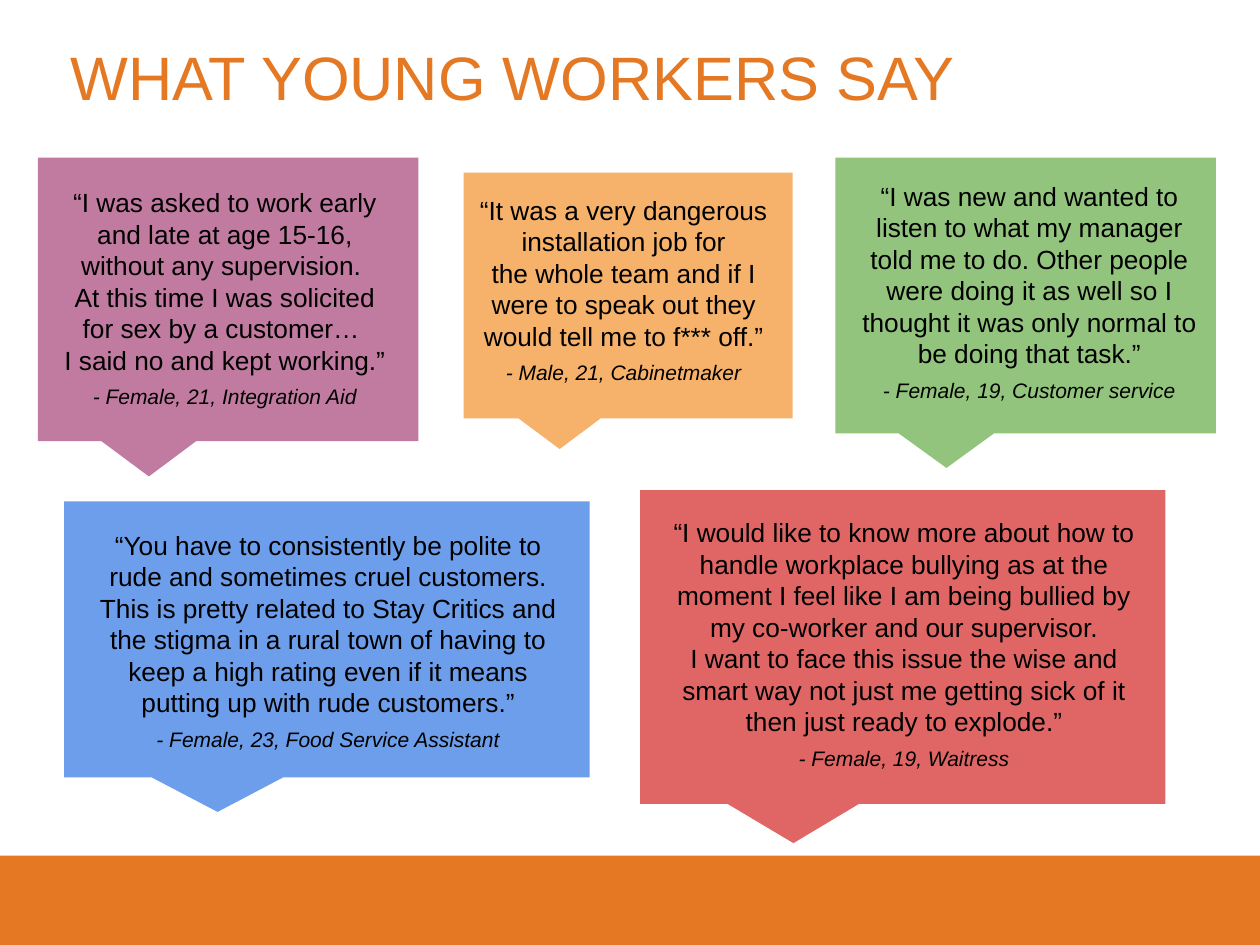
from pptx import Presentation
from pptx.dml.color import RGBColor
from pptx.enum.shapes import MSO_SHAPE
from pptx.enum.text import MSO_ANCHOR, MSO_AUTO_SIZE, PP_ALIGN
from pptx.util import Inches, Pt

RECTANGLE = MSO_SHAPE.RECTANGLE
CALLOUT = MSO_SHAPE.RECTANGULAR_CALLOUT
TOP, BOTTOM = MSO_ANCHOR.TOP, MSO_ANCHOR.BOTTOM
LEFT, CENTER = PP_ALIGN.LEFT, PP_ALIGN.CENTER
NO_FIT = MSO_AUTO_SIZE.NONE

ORANGE = RGBColor(0xE4, 0x78, 0x23)
BLACK = RGBColor(0x00, 0x00, 0x00)
MAUVE = RGBColor(0xC2, 0x7B, 0xA0)
BLUE = RGBColor(0x6D, 0x9E, 0xEB)
APRICOT = RGBColor(0xF6, 0xB2, 0x6B)
GREEN = RGBColor(0x93, 0xC4, 0x7D)
RED = RGBColor(0xE0, 0x66, 0x66)

# Bubble colour, bubble area, text area, quote paragraphs, speaker; \v breaks a line
QUOTES = [
    (MAUVE, (0.3, 1.25, 3.02, 2.25), (0.4, 1.48, 2.77, 1.85),
     ["“I was asked to work early and late at age 15-16, without any supervision. ",
      "At this time I was solicited for sex by a customer… ",
      "I said no and kept working.”"],
     "- Female, 21, Integration Aid"),
    (APRICOT, (3.68, 1.37, 2.61, 1.95), (3.7, 1.54, 2.5, 1.78),
     ["“It was a very dangerous installation job for\vthe whole team and if I "
      "were to speak out they would tell me to f*** off.”"],
     "- Male, 21, Cabinetmaker"),
    (GREEN, (6.63, 1.25, 3.02, 2.19), (6.66, 1.43, 3.02, 2.08),
     ["“I was new and wanted to listen to what my manager told me to do. Other "
      "people were doing it as well so I thought it was only normal to\v"
      "be doing that task.”"],
     "- Female, 19, Customer service"),
    (BLUE, (0.51, 3.98, 4.17, 2.19), (0.67, 4.2, 3.87, 2.02),
     ["“You have to consistently be polite to rude and sometimes cruel customers. "
      "This is pretty related to Stay Critics and the stigma in a rural town of "
      "having to keep a high rating even if it means putting up with rude customers.”"],
     "- Female, 23, Food Service Assistant"),
    (RED, (5.08, 3.89, 4.17, 2.49), (5.24, 4.1, 3.87, 2.14),
     ["“I would like to know more about how to handle workplace bullying as at the "
      "moment I feel like I am being bullied by my co-worker and our supervisor.\v"
      "I want to face this issue the wise and smart way not just me getting sick "
      "of it then just ready to explode.”"],
     "- Female, 19, Waitress"),
]


def add_filled_shape(page, kind, area, color):
    shape = page.shapes.add_shape(kind, *map(Inches, area))
    shape.shadow.inherit = False
    shape.fill.solid()
    shape.fill.fore_color.rgb = color
    shape.line.fill.background()
    return shape


def set_frame(frame, side_margin=0, anchor=TOP):
    frame.word_wrap = True
    frame.auto_size = NO_FIT
    frame.vertical_anchor = anchor
    frame.margin_left = frame.margin_right = Inches(side_margin)
    frame.margin_top = frame.margin_bottom = 0


def write(para, text, size=15, color=BLACK, italic=False, align=CENTER, before=0):
    para.text = text
    para.alignment = align
    para.space_before = Pt(before)
    for span in para.runs:
        span.font.name = "Arial"
        span.font.size = Pt(size)
        span.font.italic = italic
        span.font.color.rgb = color


def add_title(page, text):
    title = page.shapes.title
    title.left, title.top, title.width, title.height = map(Inches, (0.56, 0.42, 9, 0.47))
    set_frame(title.text_frame, anchor=BOTTOM)
    para = title.text_frame.paragraphs[0]
    write(para, text, size=35, color=ORANGE, align=LEFT)
    para.line_spacing = 0.8


def add_quote(page, color, bubble_area, text_area, paragraphs, speaker):
    bubble = add_filled_shape(page, CALLOUT, bubble_area, color)
    bubble.adjustments[0] = -0.208
    bubble.adjustments[1] = 0.625
    frame = page.shapes.add_textbox(*map(Inches, text_area)).text_frame
    set_frame(frame, side_margin=0.1)
    para = frame.paragraphs[0]
    for text in paragraphs:
        write(para, text)
        para = frame.add_paragraph()
    write(para, speaker, size=12, italic=True, before=4.8)


def main():
    deck = Presentation()
    deck.slide_width, deck.slide_height = Inches(10), Inches(7.5)
    page = deck.slides.add_slide(deck.slide_layouts[5])
    add_filled_shape(page, RECTANGLE, (-0.02, 6.79, 10.07, 0.73), ORANGE)
    add_title(page, "WHAT YOUNG WORKERS SAY")
    for quote in QUOTES:
        add_quote(page, *quote)
    deck.save("out.pptx")


if __name__ == "__main__":
    main()
